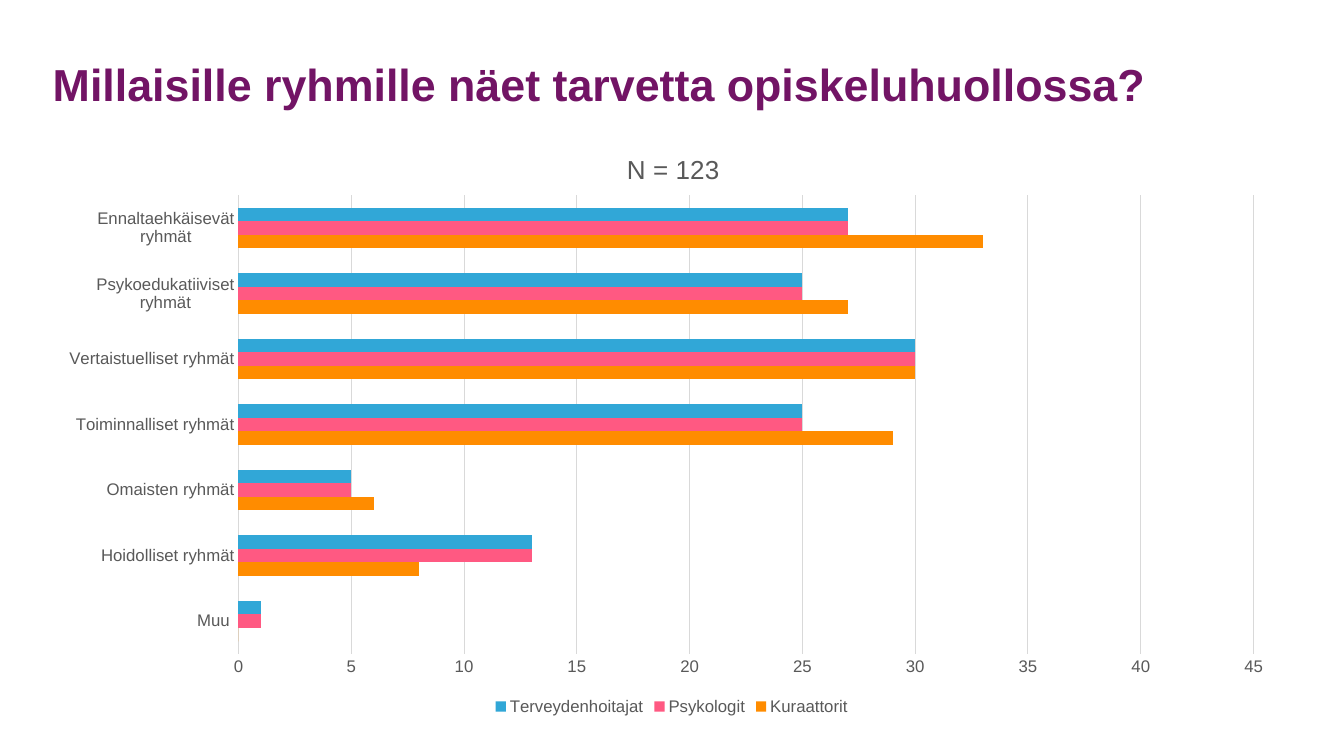
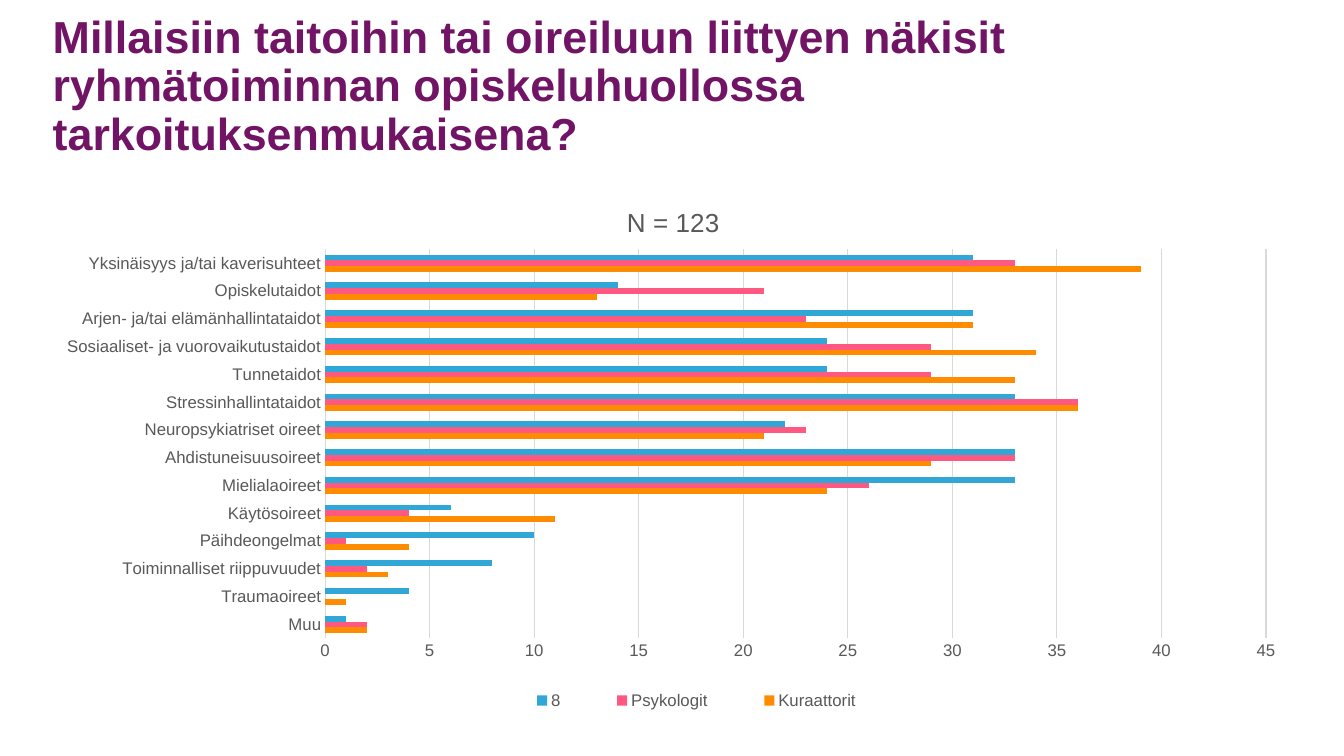
from pptx import Presentation
from pptx.chart.data import CategoryChartData
from pptx.dml.color import RGBColor
from pptx.enum.chart import XL_CHART_TYPE, XL_LEGEND_POSITION, XL_TICK_MARK
from pptx.enum.text import MSO_ANCHOR
from pptx.oxml import parse_xml
from pptx.oxml.ns import nsdecls, qn
from pptx.util import Cm, Pt

PURPLE = RGBColor(0x72, 0x14, 0x65)
GREY = RGBColor(0x59, 0x59, 0x59)
LIGHT_GREY = RGBColor(0xD9, 0xD9, 0xD9)
ORANGE = RGBColor(0xFF, 0x8C, 0x00)
PINK = RGBColor(0xFF, 0x59, 0x82)
BLUE = RGBColor(0x31, 0xA7, 0xD7)
SERIES_COLORS = (ORANGE, PINK, BLUE)

BAR_CLUSTERED = XL_CHART_TYPE.BAR_CLUSTERED
LEGEND_BOTTOM = XL_LEGEND_POSITION.BOTTOM
NO_TICK = XL_TICK_MARK.NONE
MIDDLE = MSO_ANCHOR.MIDDLE

FONT = "Arial"
LEFT = Cm(1.33)
CONTENT_WIDTH = Cm(31.2)
CHART_BOTTOM = Cm(18.13)

# Categories run from the bottom of the chart to the top.
GROUP_TYPES = [
    "Muu ", "Hoidolliset ryhmät", "Omaisten ryhmät", "Toiminnalliset ryhmät",
    "Vertaistuelliset ryhmät", "Psykoedukatiiviset ryhmät",
    "Ennaltaehkäisevät ryhmät",
]
GROUP_ANSWERS = {
    "Kuraattorit": [0, 8, 6, 29, 30, 27, 33],
    "Psykologit": [1, 13, 5, 25, 30, 25, 27],
    "Terveydenhoitajat": [1, 13, 5, 25, 30, 25, 27],
}
SKILLS = [
    "Muu", "Traumaoireet", "Toiminnalliset riippuvuudet", "Päihdeongelmat",
    "Käytösoireet", "Mielialaoireet", "Ahdistuneisuusoireet",
    "Neuropsykiatriset oireet", "Stressinhallintataidot", "Tunnetaidot",
    "Sosiaaliset- ja vuorovaikutustaidot",
    "Arjen- ja/tai elämänhallintataidot", "Opiskelutaidot",
    "Yksinäisyys ja/tai kaverisuhteet",
]
SKILL_ANSWERS = {
    "Kuraattorit": [2, 1, 3, 4, 11, 24, 29, 21, 36, 33, 34, 31, 13, 39],
    "Psykologit": [2, 0, 2, 1, 4, 26, 33, 23, 36, 29, 29, 23, 21, 33],
    "8": [1, 4, 8, 10, 6, 33, 33, 22, 33, 24, 24, 31, 14, 31],
}


def style_font(font, size, color, bold=False):
    font.name = FONT
    font.size = Pt(size)
    font.bold = bold
    font.color.rgb = color


def add_title(page, text):
    box = page.shapes.add_textbox(LEFT, Cm(0.91), CONTENT_WIDTH, Cm(2.57))
    frame = box.text_frame
    frame.word_wrap = True
    frame.vertical_anchor = MIDDLE
    frame.margin_left = frame.margin_right = 0
    frame.margin_top = frame.margin_bottom = 0
    para = frame.paragraphs[0]
    para.text = text
    para.line_spacing = 0.9
    style_font(para.font, 32, PURPLE, bold=True)


def place(element, index, x, y, width=None, height=None, inner=False):
    """Give a chart part a manual layout, in fractions of the chart area."""
    for layout in element.findall(qn("c:layout")):
        element.remove(layout)
    settings = [("layoutTarget", "inner")] if inner else []
    settings += [("xMode", "edge"), ("yMode", "edge"), ("x", x), ("y", y)]
    if width is not None:
        settings += [("w", width), ("h", height)]
    tags = "".join(f'<c:{name} val="{value}"/>' for name, value in settings)
    element.insert(index, parse_xml(
        f'<c:layout {nsdecls("c")}><c:manualLayout>{tags}'
        "</c:manualLayout></c:layout>"))


def style_axes(chart):
    for axis in (chart.category_axis, chart.value_axis):
        axis.major_tick_mark = axis.minor_tick_mark = NO_TICK
        style_font(axis.tick_labels.font, 12, GREY)
    values = chart.value_axis
    values.minimum_scale, values.maximum_scale = 0, 45
    values.major_unit = 5
    values.format.line.fill.background()
    for line in (chart.category_axis.format.line,
                 values.major_gridlines.format.line):
        line.color.rgb = LIGHT_GREY
        line.width = Pt(0.75)


def add_bar_chart(page, top, categories, answers, plot_area, title_spot):
    data = CategoryChartData()
    data.categories = categories
    for name, values in answers.items():
        data.add_series(name, values)
    chart = page.shapes.add_chart(BAR_CLUSTERED, LEFT, top, CONTENT_WIDTH,
                                  CHART_BOTTOM - top, data).chart
    style_font(chart.font, 10, GREY)
    style_axes(chart)

    plot = chart.plots[0]
    plot.gap_width = 182
    plot.vary_by_categories = False
    for series, color in zip(plot.series, SERIES_COLORS):
        series.format.fill.solid()
        series.format.fill.fore_color.rgb = color
    place(chart._chartSpace.chart.plotArea, 0, *plot_area, inner=True)

    chart.has_title = True
    para = chart.chart_title.text_frame.paragraphs[0]
    para.text = "N = 123"
    style_font(para.font, 18.6, GREY)
    place(chart.chart_title._element, 1, *title_spot)

    chart.has_legend = True
    chart.legend.position = LEGEND_BOTTOM
    chart.legend.include_in_layout = False
    style_font(chart.legend.font, 12, GREY)
    return chart


def main():
    deck = Presentation()
    deck.slide_width, deck.slide_height = Cm(33.87), Cm(19.05)
    blank = deck.slide_layouts[6]

    page = deck.slides.add_slide(blank)
    add_title(page, "Millaisille ryhmille näet tarvetta opiskeluhuollossa?")
    add_bar_chart(page, Cm(3.12), GROUP_TYPES, GROUP_ANSWERS,
                  (0.15, 0.12, 0.82, 0.77), (0.46, 0.04))

    page = deck.slides.add_slide(blank)
    add_title(page, "Millaisiin taitoihin tai oireiluun liittyen näkisit "
                    "ryhmätoiminnan opiskeluhuollossa "
                    "tarkoituksenmukaisena?")
    chart = add_bar_chart(page, Cm(4.52), SKILLS, SKILL_ANSWERS,
                          (0.22, 0.13, 0.76, 0.72), (0.46, 0.04))
    place(chart.legend._element, 1, 0.35, 0.93, 0.34, 0.07)

    deck.save("out.pptx")


if __name__ == "__main__":
    main()
